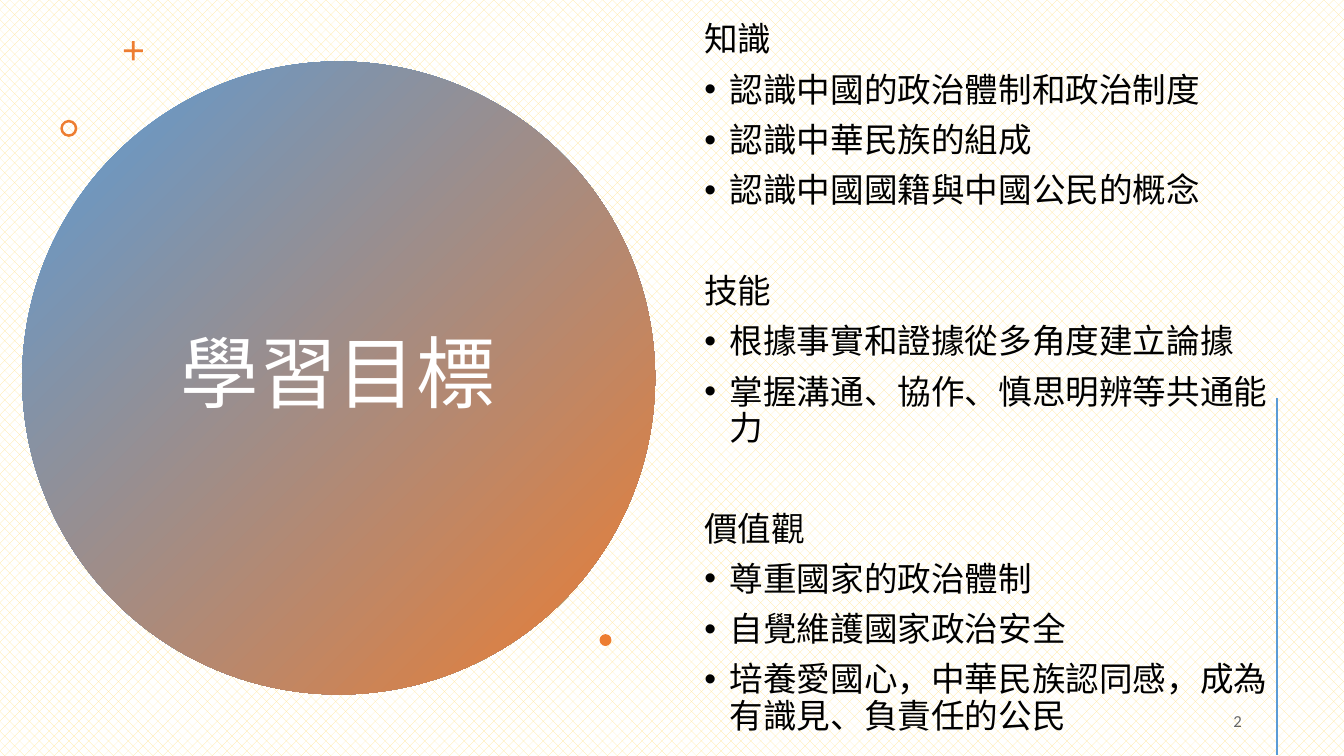
"""Build the learning objectives slide."""
from dataclasses import dataclass

from lxml import etree
from pptx import Presentation
from pptx.dml.color import RGBColor
from pptx.enum.dml import MSO_PATTERN
from pptx.enum.shapes import MSO_CONNECTOR, MSO_SHAPE
from pptx.enum.text import MSO_ANCHOR, PP_ALIGN
from pptx.oxml.ns import qn
from pptx.util import Cm, Pt

OVAL, CROSS, DONUT = MSO_SHAPE.OVAL, MSO_SHAPE.CROSS, MSO_SHAPE.DONUT
STRAIGHT = MSO_CONNECTOR.STRAIGHT
MIDDLE = MSO_ANCHOR.MIDDLE
LEFT, CENTER, RIGHT = PP_ALIGN.LEFT, PP_ALIGN.CENTER, PP_ALIGN.RIGHT
DOTTED = MSO_PATTERN.PERCENT_30

OBJECTIVES = {
    "知識": [
        "認識中國的政治體制和政治制度",
        "認識中華民族的組成",
        "認識中國國籍與中國公民的概念",
    ],
    "技能": [
        "根據事實和證據從多角度建立論據",
        "掌握溝通、協作、慎思明辨等共通能力",
    ],
    "價值觀": [
        "尊重國家的政治體制",
        "自覺維護國家政治安全",
        "培養愛國心，中華民族認同感，成為有識見、負責任的公民",
    ],
}


@dataclass(frozen=True)
class Theme:
    """Colours, font and type sizes of the slide."""
    blue: RGBColor = RGBColor(0x5B, 0x9B, 0xD5)
    orange: RGBColor = RGBColor(0xED, 0x7D, 0x31)
    cream: RGBColor = RGBColor(0xFF, 0xE6, 0x99)
    white: RGBColor = RGBColor(0xFF, 0xFF, 0xFF)
    black: RGBColor = RGBColor(0, 0, 0)
    font: str = "Calibri"
    title: int = 56
    body: int = 24
    number: int = 12
    item_gap: int = 10
    group_gap: int = 46


class SlideBuilder:
    """Draws styled elements on the current slide."""

    def __init__(self, page, theme):
        self.page = page
        self.theme = theme

    def background(self):
        """Fill the page with a light dotted pattern."""
        fill = self.page.background.fill
        fill.patterned()
        fill.pattern = DOTTED
        fill.fore_color.rgb = self.theme.cream
        fill.back_color.rgb = self.theme.white

    def shape(self, kind, left, top, size, adjustment=None):
        """Add a square-framed orange shape without outline."""
        shape = self.page.shapes.add_shape(kind, Cm(left), Cm(top), Cm(size), Cm(size))
        shape.shadow.inherit = False
        shape.fill.solid()
        shape.fill.fore_color.rgb = self.theme.orange
        shape.line.fill.background()
        if adjustment is not None:
            shape.adjustments[0] = adjustment
        return shape

    def gradient_circle(self, left, top, size):
        """Add a circle shading from blue to orange."""
        fill = self.shape(OVAL, left, top, size).fill
        fill.gradient()
        fill.gradient_angle = 315
        colors = (self.theme.blue, self.theme.orange)
        for position, (stop, color) in enumerate(zip(fill.gradient_stops, colors)):
            stop.position = position
            stop.color.rgb = color

    def text_frame(self, left, top, width, height):
        """Add a wrapping, vertically centred text box and return its frame."""
        box = self.page.shapes.add_textbox(Cm(left), Cm(top), Cm(width), Cm(height))
        frame = box.text_frame
        frame.word_wrap = True
        frame.vertical_anchor = MIDDLE
        return frame

    def add_span(self, para, text, size, color, align=LEFT):
        """Add one styled run to a paragraph and return it."""
        para.alignment = align
        span = para.add_run()
        span.text = text
        span.font.name = self.theme.font
        span.font.size = Pt(size)
        span.font.color.rgb = color
        return span

    def title(self, text, *place):
        """Add the white centred title."""
        para = self.text_frame(*place).paragraphs[0]
        para.line_spacing = 0.9
        self.add_span(para, text, self.theme.title, self.theme.white, CENTER)

    def bullet(self, para):
        """Give a paragraph a hanging bullet."""
        properties = para._p.get_or_add_pPr()
        properties.set("marL", str(Cm(0.64)))
        properties.set("indent", str(-Cm(0.64)))
        etree.SubElement(properties, qn("a:buFont"), typeface="Arial")
        etree.SubElement(properties, qn("a:buChar"), char="•")

    def objectives(self, groups, *place):
        """Add headings, each followed by its bulleted items."""
        frame = self.text_frame(*place)
        for group, (heading, items) in enumerate(groups.items()):
            for row, text in enumerate([heading, *items]):
                first = group == 0 and row == 0
                para = frame.paragraphs[0] if first else frame.add_paragraph()
                if row:
                    self.bullet(para)
                para.line_spacing = 0.9
                gap = self.theme.item_gap if row else self.theme.group_gap
                para.space_before = Pt(0 if first else gap)
                self.add_span(para, text, self.theme.body, self.theme.black)

    def page_number(self, text, *place):
        """Add the translucent page number."""
        para = self.text_frame(*place).paragraphs[0]
        para.space_after = Pt(6)
        span = self.add_span(para, text, self.theme.number, self.theme.black, RIGHT)
        color = span._r.find(".//" + qn("a:srgbClr"))
        etree.SubElement(color, qn("a:alpha"), val="60000")

    def vertical_line(self, x, top, bottom):
        """Add a blue vertical line."""
        line = self.page.shapes.add_connector(STRAIGHT, Cm(x), Cm(top), Cm(x), Cm(bottom))
        line.line.color.rgb = self.theme.blue
        line.line.width = Pt(2)
        etree.SubElement(line._element.spPr, qn("a:effectLst"))


def main():
    """Create and save the deck."""
    deck = Presentation()
    deck.slide_width, deck.slide_height = Cm(33.87), Cm(19.05)
    page = deck.slides.add_slide(deck.slide_layouts[6])
    builder = SlideBuilder(page, Theme())
    builder.background()
    builder.gradient_circle(0.56, 1.55, 15.95)
    builder.title("學習目標", 3.45, 3.58, 10.13, 11.86)
    builder.shape(CROSS, 3.12, 1.04, 0.48, 0.43)
    builder.shape(DONUT, 1.52, 3.02, 0.43, 0.15)
    builder.objectives(OBJECTIVES, 17.5, 1.45, 14.83, 16.21)
    builder.shape(OVAL, 15.11, 15.98, 0.3)
    builder.page_number("2", 23.93, 17.65, 7.62, 1.02)
    builder.vertical_line(32.18, 10.03, 19.02)
    deck.save("out.pptx")


if __name__ == "__main__":
    main()
